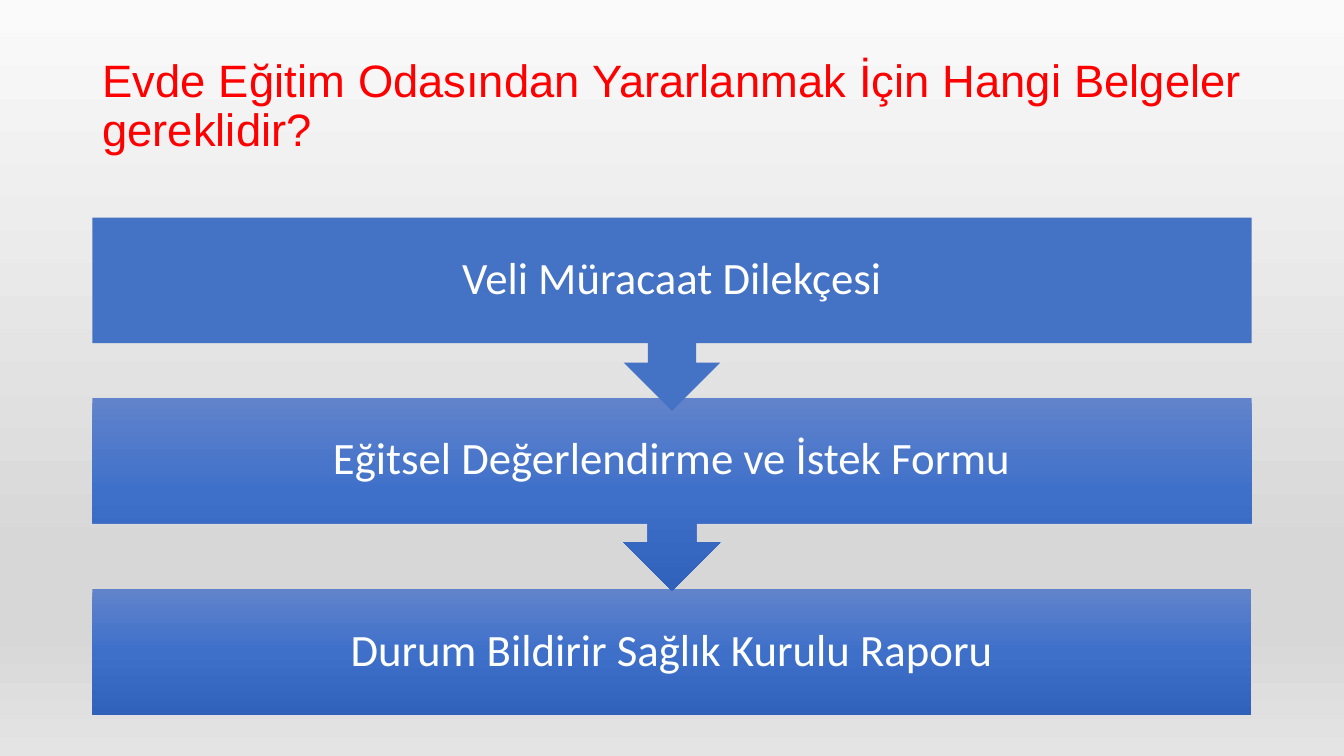
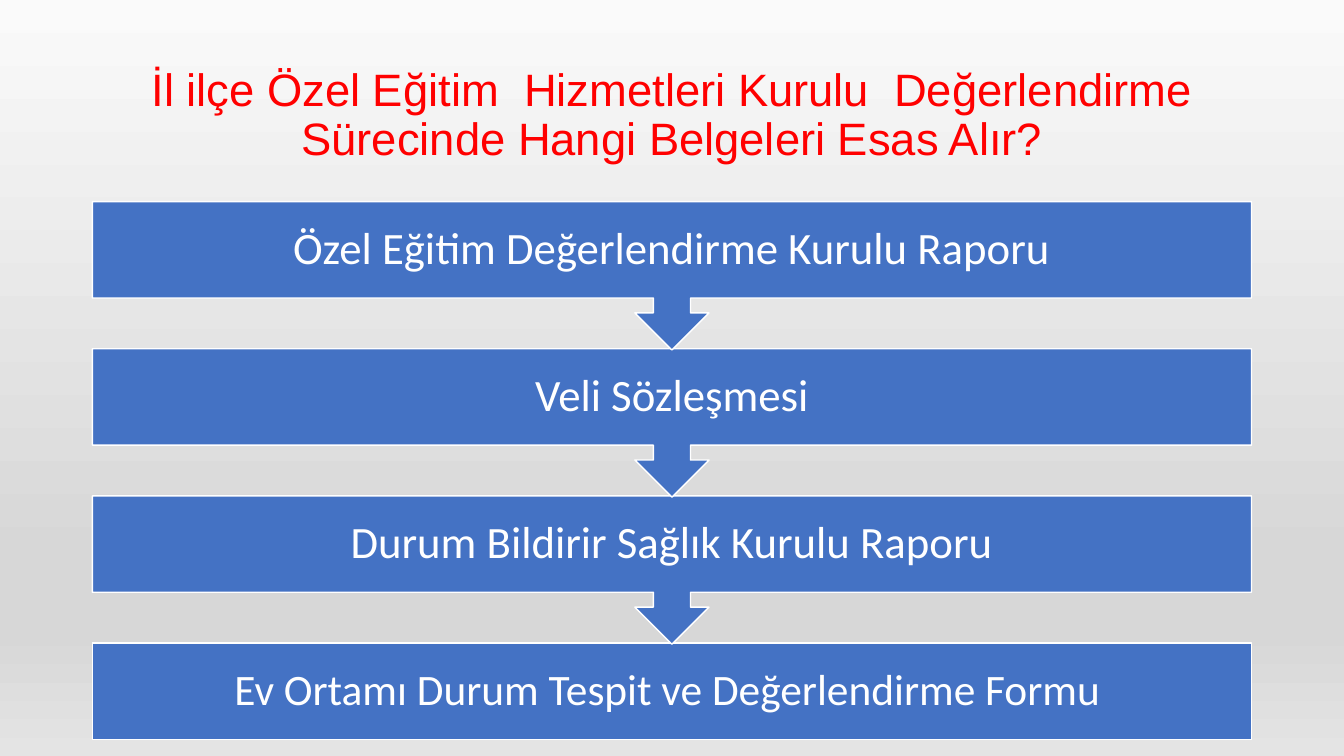
"""Build two slides of stacked callout steps about home education documents."""
from dataclasses import dataclass

from lxml.etree import SubElement
from pptx import Presentation
from pptx.dml.color import RGBColor
from pptx.enum.shapes import MSO_SHAPE
from pptx.enum.text import MSO_ANCHOR, MSO_AUTO_SIZE, PP_ALIGN
from pptx.oxml.ns import qn
from pptx.util import Pt


@dataclass(frozen=True)
class Theme:
    title_color: str = "FF0000"
    step_color: str = "4472C4"
    white: str = "FFFFFF"
    step_grad: tuple = ((0, "6183CB"), (50, "3E70CA"), (100, "3062BB"))
    back_grad: tuple = ((0, "FAFAFA"), (74, "D7D7D7"), (83, "D7D7D7"), (100, "E4E4E4"))
    title_font: str = "Arial"
    step_font: str = "Calibri"
    title_size: float = 32.4
    step_size: float = 32
    small_size: float = 31
    left: float = 66
    width: float = 828
    title_height: float = 80
    box_share: float = 0.65


T = Theme()


def set_gradient(fill, element, stops):
    fill.gradient()
    fill.gradient_angle = 270
    stop_list = element.find(".//" + qn("a:gsLst"))
    for old in list(stop_list):
        stop_list.remove(old)
    for pos, color in stops:
        gs = SubElement(stop_list, qn("a:gs"), pos=str(pos * 1000))
        SubElement(gs, qn("a:srgbClr"), val=color)


def set_text(tf, text, align, font, size, color):
    tf.text = text
    tf.word_wrap = True
    tf.auto_size = MSO_AUTO_SIZE.NONE
    tf.vertical_anchor = MSO_ANCHOR.MIDDLE
    p = tf.paragraphs[0]
    p.alignment = align
    p.line_spacing = 0.9
    r = p.runs[0]
    r.font.name = font
    r.font.size = Pt(size)
    r.font.color.rgb = RGBColor.from_string(color)


SLIDES = [
    {
        "title": "Evde Eğitim Odasından Yararlanmak İçin Hangi Belgeler gereklidir?",
        "align": PP_ALIGN.JUSTIFY,
        "title_top": 37,
        "tops": [155.5, 284, 421],
        "height": 138,
        "outlined": False,
        "steps": [
            ("Veli Müracaat Dilekçesi", T.step_size, None),
            ("Eğitsel Değerlendirme ve İstek Formu", T.step_size, T.step_grad),
            ("Durum Bildirir Sağlık Kurulu Raporu", T.step_size, T.step_grad),
        ],
    },
    {
        "title": "İl ilçe Özel Eğitim  Hizmetleri Kurulu  Değerlendirme "
                 "Sürecinde Hangi Belgeleri Esas Alır?",
        "align": PP_ALIGN.CENTER,
        "title_top": 43,
        "tops": [144 + 105.1 * i for i in range(4)],
        "height": 106,
        "outlined": True,
        "steps": [
            ("Özel Eğitim Değerlendirme Kurulu Raporu", T.step_size, None),
            ("Veli Sözleşmesi", T.step_size, None),
            ("Durum Bildirir Sağlık Kurulu Raporu", T.step_size, None),
            ("Ev Ortamı Durum Tespit ve Değerlendirme Formu ", T.small_size, None),
        ],
    },
]

prs = Presentation()
prs.slide_width, prs.slide_height = Pt(960), Pt(540)
master = prs.slide_master
set_gradient(master.background.fill, master.element, T.back_grad)

for page in SLIDES:
    s = prs.slides.add_slide(prs.slide_layouts[5])
    title = s.shapes.title
    title.left, title.top = Pt(T.left), Pt(page["title_top"])
    title.width, title.height = Pt(T.width), Pt(T.title_height)
    set_text(title.text_frame, page["title"], page["align"],
             T.title_font, T.title_size, T.title_color)

    last = len(page["steps"]) - 1
    for i in range(last, -1, -1):
        text, size, stops = page["steps"][i]
        kind, height = MSO_SHAPE.DOWN_ARROW_CALLOUT, page["height"]
        if i == last:
            kind, height = MSO_SHAPE.RECTANGLE, height * T.box_share
        sp = s.shapes.add_shape(kind, Pt(T.left), Pt(page["tops"][i]),
                                Pt(T.width), Pt(height))
        sp.shadow.inherit = False
        if stops:
            set_gradient(sp.fill, sp.element, stops)
        else:
            sp.fill.solid()
            sp.fill.fore_color.rgb = RGBColor.from_string(T.step_color)
        if page["outlined"]:
            sp.line.color.rgb = RGBColor.from_string(T.white)
            sp.line.width = Pt(1)
        else:
            sp.line.fill.background()
        tf = sp.text_frame
        tf.margin_left = tf.margin_right = Pt(18)
        tf.margin_top = tf.margin_bottom = Pt(0)
        set_text(tf, text, PP_ALIGN.CENTER, T.step_font, size, T.white)

prs.save("out.pptx")
